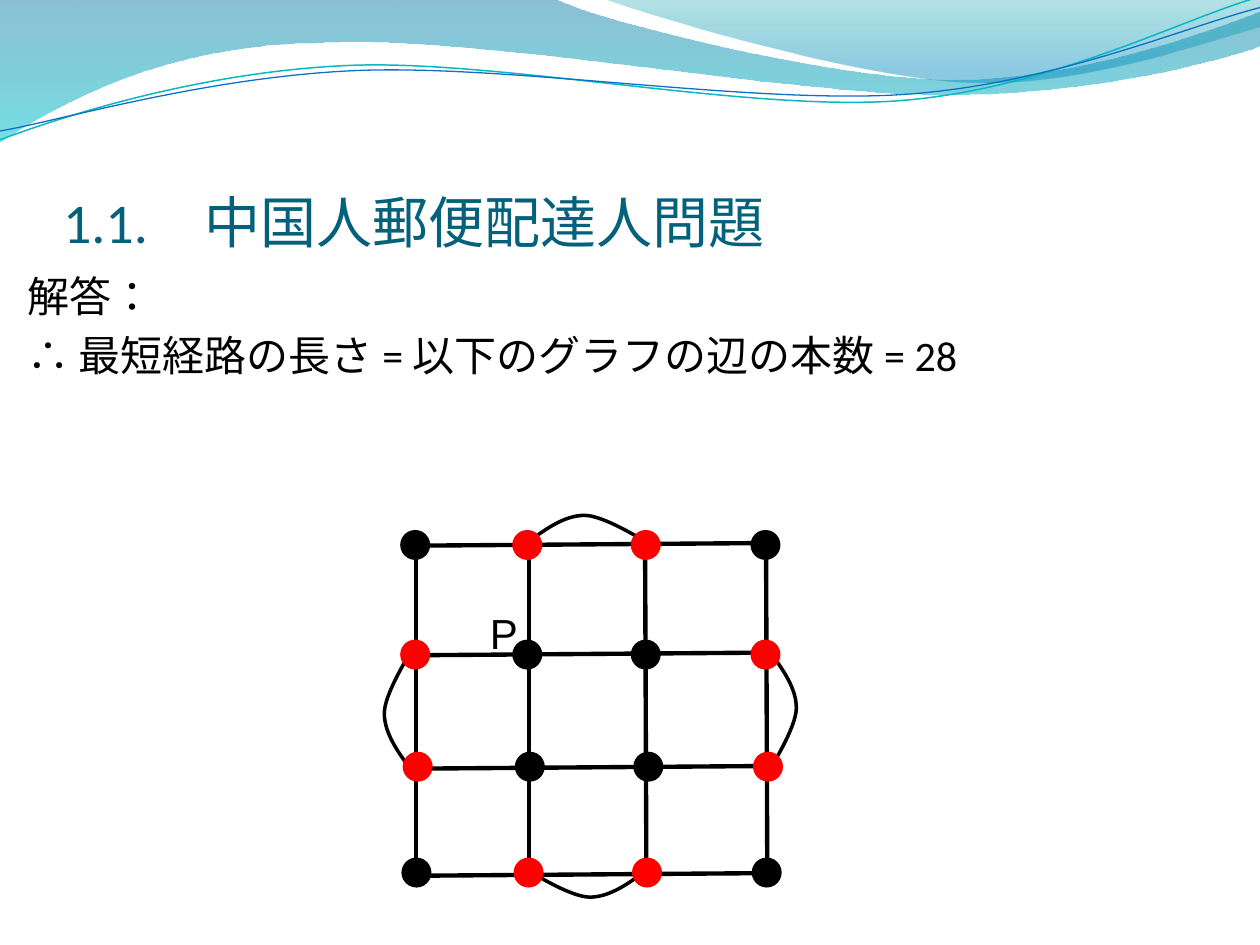
from math import cos, radians, sin
from pptx import Presentation
from pptx.dml.color import RGBColor
from pptx.enum.lang import MSO_LANGUAGE_ID
from pptx.enum.shapes import MSO_CONNECTOR, MSO_SHAPE
from pptx.enum.text import MSO_ANCHOR, MSO_AUTO_SIZE, PP_ALIGN
from pptx.oxml.ns import qn
from pptx.util import Inches, Pt
from lxml import etree

OVAL, LINE = MSO_SHAPE.OVAL, MSO_CONNECTOR.STRAIGHT
LEFT, TOP, BOTTOM = PP_ALIGN.LEFT, MSO_ANCHOR.TOP, MSO_ANCHOR.BOTTOM
NONE, GROW = MSO_AUTO_SIZE.NONE, MSO_AUTO_SIZE.SHAPE_TO_FIT_TEXT
JAPAN = MSO_LANGUAGE_ID.JAPANESE
BLACK, RED = RGBColor(0, 0, 0), RGBColor(255, 0, 0)
TEAL, AQUA = RGBColor(0x04, 0x61, 0x7B), RGBColor(0x0A, 0xB8, 0xBF)
BLUE, DEEP = RGBColor(0x0F, 0x6F, 0xC6), RGBColor(0, 0x74, 0xA1)
CYAN, SEA = RGBColor(0, 0xC6, 0xCF), RGBColor(0, 0xA1, 0xA9)
SKY = RGBColor(0, 0x8B, 0xBF)

TITLE = "1.1.　中国人郵便配達人問題"
BODY = ["解答：", "∴ 最短経路の長さ = 以下のグラフの辺の本数 = 28"]
LABEL = "P"

WAVES = [
    ((-0.01, -0.01, 10.02, 1.14),
     [(0, -0.01), (4.4, -0.01), (4.76, 0.17, 6.64, 0.63, 7.58, 0.63),
      (8.53, 0.63, 9.58, 0.26, 10, 0.09), (10.01, 0.36),
      (9.83, 0.44, 8.7, 0.76, 7.46, 0.75), (6.22, 0.75, 3.82, 0.28, 2.57, 0.34),
      (1.29, 0.35, 0.46, 0.83, -0.01, 1.13), (0, -0.01)],
     [(0, DEEP, 45), (1, CYAN, 55)]),
    ((4.79, -0.01, 5.21, 0.7),
     [(4.79, -0.01), (5.09, 0.11, 6.82, 0.62, 7.69, 0.65),
      (8.56, 0.69, 9.61, 0.32, 10, 0.21), (10, 0), (4.79, -0.01)],
     [(0, SEA, 30), (0.8, SKY, 45)]),
]
SWEEPS = [
    ((-0.02, 0.22, 10.02, 0.71),
     [(0, 1.11), (0.48, 0.93, 1.58, 0.57, 2.77, 0.52),
      (3.95, 0.47, 5.93, 0.89, 7.13, 0.8), (8.33, 0.71, 9.38, 0.15, 9.98, -0.02)],
     AQUA, 0.85),
    ((-0.02, 0.3, 10.03, 0.58),
     [(0, 1.04), (0.47, 0.96, 1.64, 0.61, 2.83, 0.56),
      (4.03, 0.51, 5.97, 0.83, 7.17, 0.75), (8.36, 0.67, 9.41, 0.21, 10, 0.06)],
     BLUE, 0.75),
]
TILT = 357.3
ARC = [(0, 0.22), (0.15, 0.11, 0.3, 0, 0.46, 0), (0.62, 0, 0.96, 0.22, 0.96, 0.22),
       (0.96, 0.22)]
ARCS = [(4.18, 6.9, 180), (2.68, 5.53, 270), (5.73, 5.53, 90), (4.18, 4.09, 0)]

COLS, ROWS = [3.19, 4.08, 5.02, 5.97], [4.22, 5.09, 5.98, 6.82]
SHIFT = [0, 0, 0.02, 0.01]
SIZE = 0.21
DOWN = [(3.3, 4.33, 0), (4.2, 4.38, 0), (5.12, 4.32, 0.01), (6.08, 4.38, 0.01)]
ACROSS = [(3.4, 4.33), (3.35, 5.2), (3.34, 6.1), (3.35, 6.95)]
EDGES = [(x, y, x + lean, y + 2.6) for x, y, lean in DOWN]
EDGES += [(x, y, x + 2.68, y - 0.02) for x, y in ACROSS]


def local(route, box, turn):
    left, top, wide, high = box
    c, s = cos(radians(turn)), sin(radians(turn))
    for part in route:
        spots = []
        for x, y in zip(part[::2], part[1::2]):
            dx, dy = x - left - wide / 2, y - top - high / 2
            spots.append((wide / 2 + c * dx + s * dy, high / 2 - s * dx + c * dy))
        yield spots


def outline(box, route, turn=0, close=False):
    left, top, wide, high = map(Inches, box)
    pen = slide.shapes.build_freeform(left, top)
    pen.add_line_segments([(left + wide, top + high)], close=close)
    shape = pen.convert_to_shape()
    shape.shadow.inherit = False
    shape.rotation = turn
    trail = next(shape.element.iter(qn("a:path")))
    end = trail.find(qn("a:close"))
    for node in list(trail):
        trail.remove(node)
    for n, spots in enumerate(local(route, box, turn)):
        kind = "moveTo" if n == 0 else "lnTo" if len(spots) == 1 else "cubicBezTo"
        step = etree.SubElement(trail, qn("a:" + kind))
        for x, y in spots:
            etree.SubElement(step, qn("a:pt"), x=str(Inches(x)), y=str(Inches(y)))
    if end is not None:
        trail.append(end)
    return shape


def stroke(line, color, width):
    line.color.rgb = color
    line.width = Pt(width)


def curve(box, route, turn, color, width):
    shape = outline(box, route, turn)
    shape.fill.background()
    stroke(shape.line, color, width)


def write(shape, lines, size, font, color, gap=0, **frame):
    text = shape.text_frame
    text.text = "\n".join(lines)
    for name, value in frame.items():
        setattr(text, name, value)
    text.word_wrap = True
    look = {"size": Pt(size), "name": font, "bold": False, "language_id": JAPAN}
    for para in text.paragraphs:
        para.alignment = LEFT
        para.space_before = Pt(gap)
        for run in para.runs:
            for name, value in look.items():
                setattr(run.font, name, value)
            run.font.color.rgb = color


def nodes(inner, color):
    for r, y in enumerate(ROWS):
        for c, x in enumerate(COLS):
            odd = (r in (0, 3)) != (c in (0, 3))
            if odd != inner:
                continue
            dot = slide.shapes.add_shape(
                OVAL, *map(Inches, (x + SHIFT[r], y, SIZE, SIZE)))
            dot.shadow.inherit = False
            dot.fill.solid()
            dot.fill.fore_color.rgb = color
            stroke(dot.line, color, 2)


deck = Presentation()
deck.slide_width, deck.slide_height = Inches(10), Inches(7.5)
slide = deck.slides.add_slide(deck.slide_layouts[5])

for box, route, stops in WAVES:
    wave = outline(box, route, close=True)
    wave.line.fill.background()
    wave.fill.gradient()
    wave.fill.gradient_angle = 270
    for stop, (place, color, _) in zip(wave.fill.gradient_stops, stops):
        stop.position = place
        stop.color.rgb = color
    tints = wave.element.spPr.iter(qn("a:srgbClr"))
    for tint, (_, _, alpha) in zip(tints, stops):
        etree.SubElement(tint, qn("a:alpha"), val=str(alpha * 1000))

for box, route, color, width in SWEEPS:
    curve(box, route, TILT, color, width)

for x, y, turn in ARCS:
    box = (x, y, 0.96, 0.22)
    shape = outline(box, [[v + (x, y)[k % 2] for k, v in enumerate(part)] for part in ARC])
    shape.rotation = turn
    shape.fill.background()
    stroke(shape.line, BLACK, 2)

title = slide.shapes.title
area = {"left": 0.5, "top": 0.77, "width": 9, "height": 1.25}
for name, value in area.items():
    setattr(title, name, Inches(value))
write(title, [TITLE], 32, "Calibri", TEAL, vertical_anchor=BOTTOM, auto_size=NONE,
      margin_left=0, margin_top=Inches(0.05), margin_right=0, margin_bottom=0)

body = slide.shapes.add_textbox(*map(Inches, (0.12, 2.1, 9.8, 4.8)))
write(body, BODY, 24, "Calibri", BLACK, 4.8, vertical_anchor=TOP, auto_size=NONE)
label = slide.shapes.add_textbox(*map(Inches, (3.79, 4.77, 0.36, 0.5)))
write(label, [LABEL], 24, "Arial", BLACK, auto_size=GROW)

nodes(False, BLACK)
for ends in EDGES:
    edge = slide.shapes.add_connector(LINE, *map(Inches, ends))
    stroke(edge.line, BLACK, 2.5)
    etree.SubElement(edge.element.spPr, qn("a:effectLst"))
nodes(True, RED)

deck.save("out.pptx")
